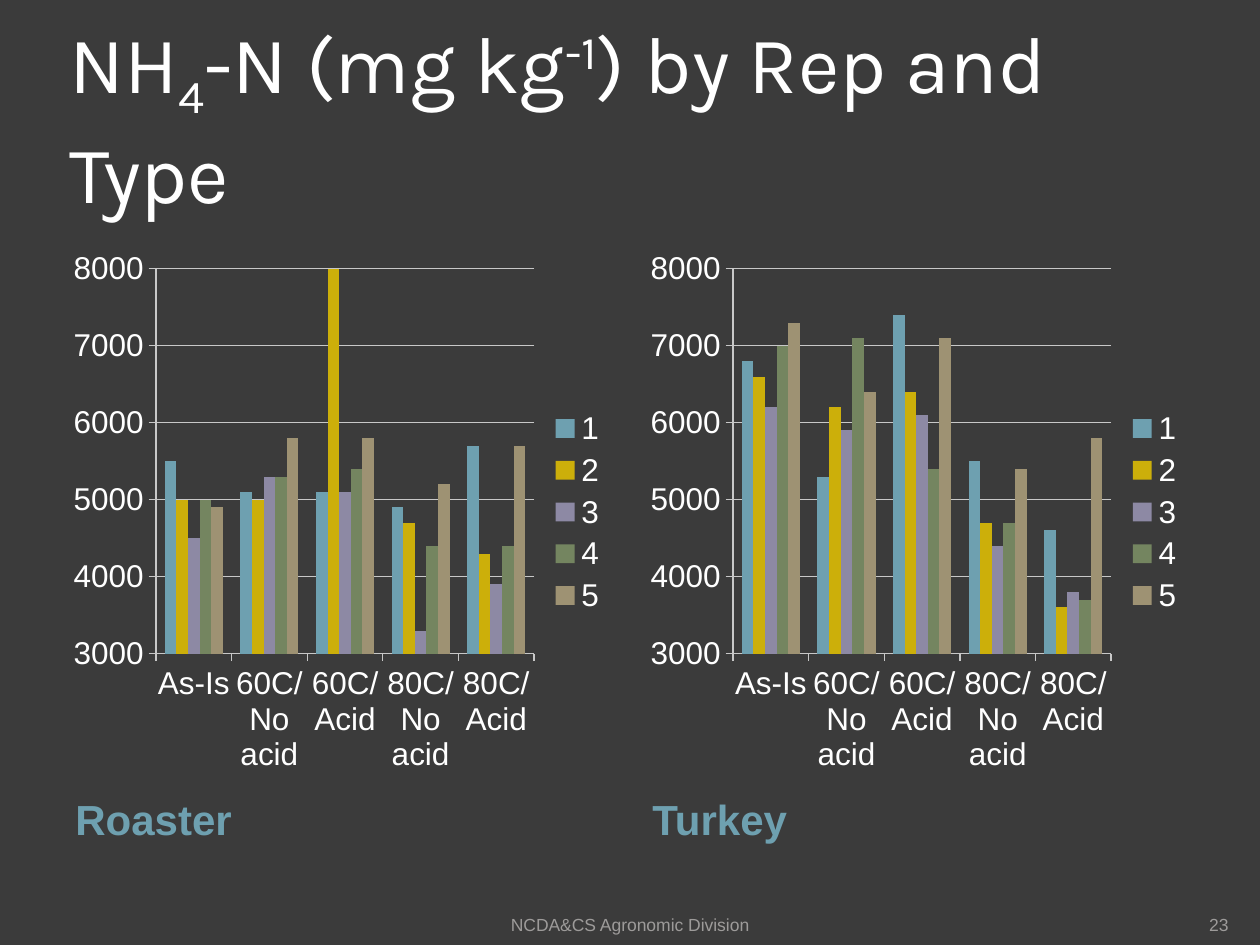
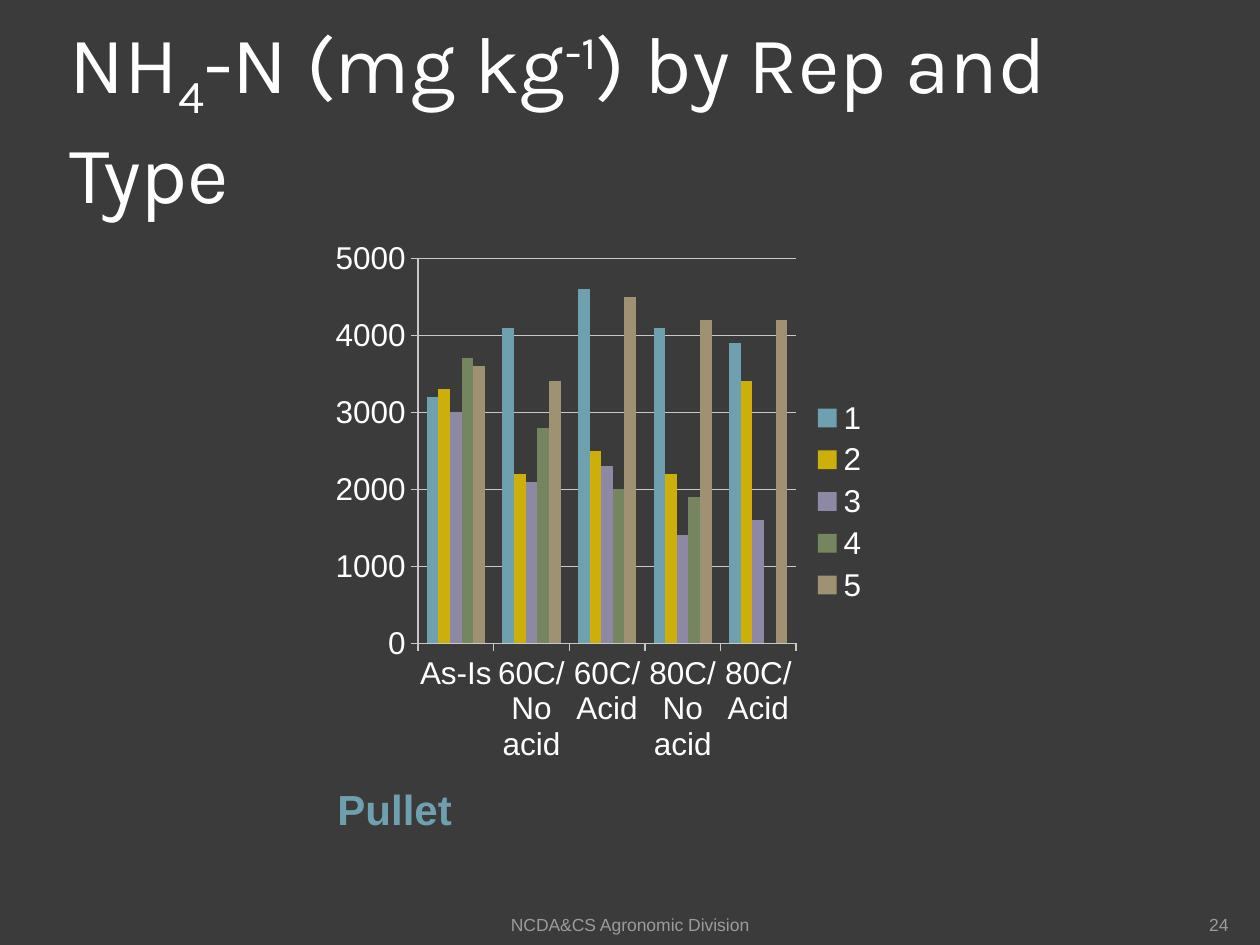
"""Build two slides of clustered column charts of ammonium nitrogen by rep and type."""
from pptx import Presentation
from pptx.chart.data import CategoryChartData
from pptx.dml.color import RGBColor
from pptx.enum.chart import XL_CHART_TYPE, XL_LEGEND_POSITION, XL_TICK_MARK
from pptx.enum.text import MSO_ANCHOR, PP_ALIGN
from pptx.oxml import parse_xml
from pptx.oxml.ns import nsdecls
from pptx.util import Pt

COLUMN = XL_CHART_TYPE.COLUMN_CLUSTERED
RIGHT = XL_LEGEND_POSITION.RIGHT
OUT, NONE = XL_TICK_MARK.OUTSIDE, XL_TICK_MARK.NONE
TOP, MID, LOW = MSO_ANCHOR.TOP, MSO_ANCHOR.MIDDLE, MSO_ANCHOR.BOTTOM
START, MIDST, END = PP_ALIGN.LEFT, PP_ALIGN.CENTER, PP_ALIGN.RIGHT

BACK, WHITE, GREY, RULE = "3B3B3B", "FFFFFF", "9D9B9A", "C8C8C8"
HUES = ["6EA0B0", "CCAF0A", "8D89A4", "748560", "9E9273"]
TITLE = [("NH", 0), ("4", -25), ("-N (mg kg", 0), ("-1", 30),
         (") by Rep and Type", 0)]
FOOTER = "NCDA&CS Agronomic Division"
CATS = ["As-Is", "60C/No acid", "60C/Acid", "80C/No acid", "80C/Acid"]
PLOT = {"x": 0.167, "y": 0.052, "w": 0.679, "h": 0.709}
WIDE, TALL = 318.25, 310.25
DROP = 312.5

SLIDES = [
    {"page": "23", "top": 137.5, "low": 3000, "high": 8000, "charts": [
        ("Roaster", 36, [
            [5500, 5100, 5100, 4900, 5700],
            [5000, 5000, 8400, 4700, 4300],
            [4500, 5300, 5100, 3300, 3900],
            [5000, 5300, 5400, 4400, 4400],
            [4900, 5800, 5800, 5200, 5700]]),
        ("Turkey", 365.75, [
            [6800, 5300, 7400, 5500, 4600],
            [6600, 6200, 6400, 4700, 3600],
            [6200, 5900, 6100, 4400, 3800],
            [7000, 7100, 5400, 4700, 3700],
            [7300, 6400, 7100, 5400, 5800]])]},
    {"page": "24", "top": 131.5, "low": 0, "high": 5000, "charts": [
        ("Pullet", 185.75, [
            [3200, 4100, 4600, 4100, 3900],
            [3300, 2200, 2500, 2200, 3400],
            [3000, 2100, 2300, 1400, 1600],
            [3700, 2800, 2000, 1900, None],
            [3600, 3400, 4500, 4200, 4200]])]},
]

HEAD = {"size": 46, "face": "Karla", "hue": WHITE, "align": START,
        "anchor": MID, "inset": (3.6, 3.6, 3.6, 3.6)}
LABEL = {"size": 24, "face": "Arial", "hue": HUES[0], "bold": True,
         "align": START, "anchor": TOP, "inset": (7.2, 3.6, 7.2, 3.6),
         "before": 4.8}
FOOT = {"size": 10, "face": "Arial", "hue": GREY, "align": MIDST,
        "anchor": LOW, "inset": (0, 3.6, 0, 0)}
PAGE = {**FOOT, "align": END, "inset": (0, 0, 0, 0)}


def color(code):
    return RGBColor.from_string(code)


def assign(item, **values):
    for name, value in values.items():
        setattr(item, name, value)


def style(font, size, face, hue, bold=False):
    assign(font, size=Pt(size), name=face, bold=bold)
    font.color.rgb = color(hue)


def write(slide, runs, box, look):
    frame = slide.shapes.add_textbox(*map(Pt, box)).text_frame
    sides = ("margin_left", "margin_top", "margin_right", "margin_bottom")
    assign(frame, word_wrap=True, vertical_anchor=look["anchor"],
           **dict(zip(sides, map(Pt, look["inset"]))))
    para = frame.paragraphs[0]
    assign(para, alignment=look["align"], space_before=Pt(look.get("before", 0)))
    for text, shift in runs:
        run = para.add_run()
        run.text = text
        style(run.font, look["size"], look["face"], look["hue"],
              look.get("bold", False))
        if shift:
            run._r.get_or_add_rPr().set("baseline", str(shift * 1000))


def place(chart):
    area = chart._chartSpace.chart.plotArea
    for old in area.findall("{*}layout"):
        area.remove(old)
    parts = "".join(f'<c:{side}Mode val="edge"/>' for side in "xy")
    parts += "".join(f'<c:{key} val="{val}"/>' for key, val in PLOT.items())
    area.insert(0, parse_xml(
        f'<c:layout {nsdecls("c")}><c:manualLayout>'
        f'<c:layoutTarget val="inner"/>{parts}</c:manualLayout></c:layout>'))


def draw(slide, rows, left, top, low, high):
    data = CategoryChartData()
    data.categories = CATS
    for rep, row in enumerate(rows, 1):
        data.add_series(str(rep), row)
    box = map(Pt, (left, top, WIDE, TALL))
    chart = slide.shapes.add_chart(COLUMN, *box, data).chart
    style(chart.font, 18, "Arial", WHITE)
    assign(chart, has_title=False, has_legend=True)
    assign(chart.legend, position=RIGHT, include_in_layout=False)
    plot = chart.plots[0]
    assign(plot, gap_width=150, overlap=0, vary_by_categories=False)
    for series, hue in zip(plot.series, HUES):
        series.format.fill.solid()
        series.format.fill.fore_color.rgb = color(hue)
        series.invert_if_negative = False
    scale = chart.value_axis
    assign(scale, minimum_scale=low, maximum_scale=high, major_unit=1000,
           has_major_gridlines=True)
    for axis in (scale, chart.category_axis):
        assign(axis, major_tick_mark=OUT, minor_tick_mark=NONE)
    for part in (scale, chart.category_axis, scale.major_gridlines):
        part.format.line.width = Pt(0.75)
        part.format.line.color.rgb = color(RULE)
    place(chart)


def main():
    deck = Presentation()
    assign(deck, slide_width=Pt(720), slide_height=Pt(540))
    for spec in SLIDES:
        slide = deck.slides.add_slide(deck.slide_layouts[6])
        slide.background.fill.solid()
        slide.background.fill.fore_color.rgb = color(BACK)
        write(slide, TITLE, (36, 21.6, 648, 90), HEAD)
        for name, left, rows in spec["charts"]:
            draw(slide, rows, left, spec["top"], spec["low"], spec["high"])
            write(slide, [(name, 0)], (left, spec["top"] + DROP, WIDE, 66), LABEL)
        write(slide, [(FOOTER, 0)], (246, 505.5, 228, 28.8), FOOT)
        write(slide, [(spec["page"], 0)], (642, 505.5, 60, 28.8), PAGE)
    deck.save("out.pptx")


if __name__ == "__main__":
    main()
